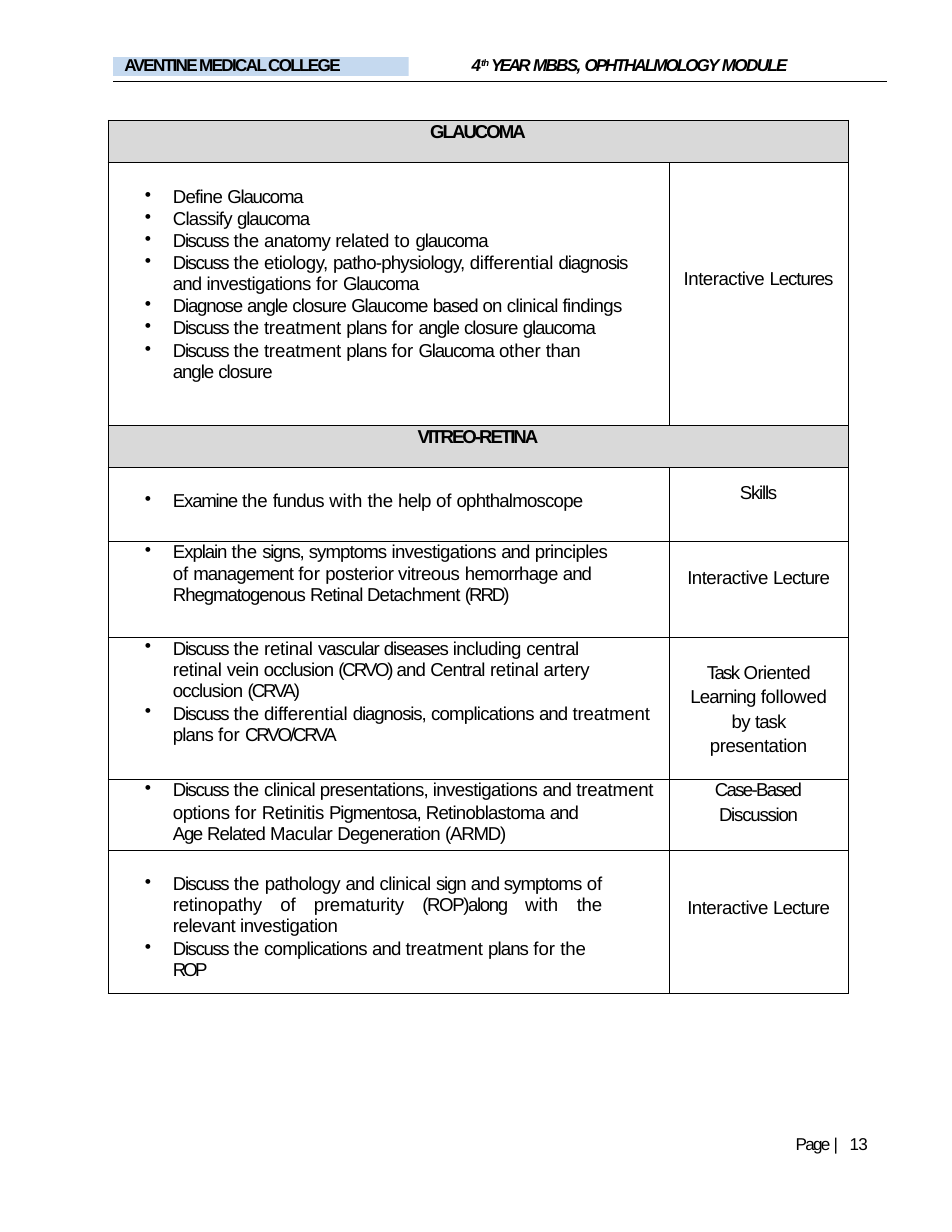
from lxml import etree
from pptx import Presentation
from pptx import util as u
from pptx.dml.color import RGBColor
from pptx.enum import shapes, text
from pptx.oxml import ns

BLACK = RGBColor(0, 0, 0)
BAND_BLUE = RGBColor(0xC5, 0xD9, 0xEF)
HEADING_GREY = RGBColor(0xD9, 0xD9, 0xD9)
CENTER = text.PP_ALIGN.CENTER
JUSTIFY = text.PP_ALIGN.JUSTIFY

WORDS_BY_SPACING = {
    2.2: "|",
    0.1: "to",
    0: "for with",
    -0.1: "the treatment differential of other",
    -0.2: "retinal artery followed retinopathy prematurity",
    -0.3: "related etiology, than posterior vitreous central Interactive presentation "
          "options Retinitis relevant investigation",
    -0.4: "clinical findings help investigations principles including vein Oriented "
          "presentations, Macular pathology",
    -0.5: "Define Classify anatomy patho-physiology, on fundus ophthalmoscope hemorrhage "
          "Retinal Detachment Central complications by Retinoblastoma Degeneration",
    -0.6: "and closure plans symptoms management occlusion Learning task Related Lecture 13",
    -0.7: "glaucoma diagnosis angle Glaucome Explain Rhegmatogenous vascular diagnosis, "
          "Pigmentosa, Lectures",
    -0.8: "Glaucoma Diagnose based Examine signs, diseases Skills Discussion sign (ARMD)",
    -0.9: "Discuss Age (ROP)along",
    -1.1: "Task Case-Based Page",
    -1.3: "(RRD) (CRVA)",
    -1.4: "(CRVO) CRVO/CRVA",
    -1.9: "ROP",
}
SPACING = {word: spacing for spacing, words in WORDS_BY_SPACING.items() for word in words.split()}

ROWS = [
    (27.4, "GLAUCOMA"),
    (168.5, 15, [("Define Glaucoma", 0), ("Classify glaucoma", 0),
                 ("Discuss the anatomy related to glaucoma", 0),
                 ("Discuss the etiology, patho-physiology, differential diagnosis "
                  "and investigations for Glaucoma", 18),
                 ("Diagnose angle closure Glaucome based on clinical findings", 0),
                 ("Discuss the treatment plans for angle closure glaucoma", 0),
                 ("Discuss the treatment plans for Glaucoma other than angle closure", 43)],
     68, ["Interactive Lectures"], 1),
    (27.4, "VITREO-RETINA"),
    (47.5, 15, [("Examine the fundus with the help of ophthalmoscope", 0)], 9.5, ["Skills"], 1),
    (61.9, 0, [("Explain the signs, symptoms investigations and principles of management for "
                "posterior vitreous hemorrhage and Rhegmatogenous Retinal Detachment (RRD)", 33)],
     17, ["Interactive Lecture"], 1),
    (91.4, 0, [("Discuss the retinal vascular diseases including central retinal vein occlusion "
                "(CRVO) and Central retinal artery occlusion (CRVA)", 41),
               ("Discuss the differential diagnosis, complications and treatment "
                "plans for CRVO/CRVA", 5)],
     13.5, ["Task Oriented Learning followed by task presentation"], 1.17),
    (45.4, 0, [("Discuss the clinical presentations, investigations and treatment", 0),
               ("options for Retinitis Pigmentosa, Retinoblastoma and Age Related Macular "
                "Degeneration (ARMD)", 46)],
     0, ["Case-Based", "Discussion"], 1),
    (92.2, 14.5, [("Discuss the pathology and clinical sign and symptoms of retinopathy of "
                   "prematurity (ROP)along with the relevant investigation", 43),
                  ("Discuss the complications and treatment plans for the ROP", 43)],
     30.5, ["Interactive Lecture"], 1),
]


def add_run(paragraph, content, size=12, bold=False, italic=False, spacing=0, baseline=0):
    run = paragraph.add_run()
    run.text = content
    font = run.font
    font.name, font.size, font.bold, font.italic = "Arial", u.Pt(size), bold, italic
    font.color.rgb = BLACK
    properties = run._r.get_or_add_rPr()
    properties.set("spc", str(round(spacing * 100)))
    if baseline:
        properties.set("baseline", str(baseline * 1000))


def write_text(frame, content, size=12, bold=False, spacing=None, align=None,
               line_spacing=None, before=0, left=0, right=0, bullet=False):
    paragraph = frame.paragraphs[0]
    if paragraph.runs:
        paragraph = frame.add_paragraph()
    paragraph.alignment = align
    paragraph.line_spacing = line_spacing
    paragraph.space_before = u.Pt(before)
    properties = paragraph._p.get_or_add_pPr()
    properties.set("marL", str(u.Pt(left)))
    properties.set("marR", str(u.Pt(right)))
    if bullet:
        properties.set("indent", str(u.Pt(-18)))
        etree.SubElement(properties, ns.qn("a:buChar")).set("char", "•")
    if spacing is not None:
        add_run(paragraph, content, size, bold, spacing=spacing)
        return
    words = content.split()
    for index, word in enumerate(words, 1):
        gap = " " if index < len(words) else ""
        add_run(paragraph, word + gap, size, bold, spacing=SPACING[word])


def clear_margins(holder, top=0):
    holder.margin_left = holder.margin_right = holder.margin_bottom = 0
    holder.margin_top = u.Pt(top)


def add_box(slide, left, top, width, height):
    frame = slide.shapes.add_textbox(u.Pt(left), u.Pt(top), u.Pt(width), u.Pt(height)).text_frame
    frame.word_wrap = True
    clear_margins(frame)
    return frame


def add_rule(slide, left, right, top):
    rule = slide.shapes.add_connector(shapes.MSO_CONNECTOR.STRAIGHT,
                                      u.Pt(left), u.Pt(top), u.Pt(right), u.Pt(top))
    rule.line.color.rgb = BLACK
    rule.line.width = u.Pt(0.75)
    etree.SubElement(rule._element.spPr, ns.qn("a:effectLst"))


def add_college_band(slide):
    band = slide.shapes.add_shape(shapes.MSO_SHAPE.RECTANGLE,
                                  u.Pt(72.7), u.Pt(36.7), u.Pt(190), u.Pt(12.2))
    band.shadow.inherit = False
    band.fill.solid()
    band.fill.fore_color.rgb = BAND_BLUE
    band.line.fill.background()
    frame = band.text_frame
    clear_margins(frame)
    frame.vertical_anchor = text.MSO_ANCHOR.TOP
    write_text(frame, "AVENTINE MEDICAL COLLEGE", size=11, bold=True, spacing=-1.1,
               align=text.PP_ALIGN.LEFT, line_spacing=u.Pt(11.6), left=7.2)


def add_module_title(slide):
    paragraph = add_box(slide, 303.1, 34.8, 262.8, 14.4).paragraphs[0]
    for content, size, spacing, baseline in [
            ("4", 11, -0.3, 0), ("th ", 10.5, -0.5, 32), ("YEAR ", 11, -1.7, 0),
            ("MBBS, ", 11, -1.1, 0), ("OPHTHALMOLOGY ", 11, -1.3, 0), ("MODULE", 11, -1.1, 0)]:
        add_run(paragraph, content, size, True, True, spacing, baseline)


def style_cell(cell, fill=None, top=0):
    clear_margins(cell, top)
    properties = cell._tc.get_or_add_tcPr()
    for side in ("lnL", "lnR", "lnT", "lnB"):
        border = etree.SubElement(properties, ns.qn("a:" + side), w=str(u.Pt(0.5)))
        solid = etree.SubElement(border, ns.qn("a:solidFill"))
        etree.SubElement(solid, ns.qn("a:srgbClr"), val=str(BLACK))
    if fill is None:
        cell.fill.background()
    else:
        cell.fill.solid()
        cell.fill.fore_color.rgb = fill


def fill_heading(cells, heading):
    for cell in cells:
        style_cell(cell, HEADING_GREY)
    cells[0].merge(cells[1])
    write_text(cells[0].text_frame, heading, bold=True, spacing=-1.3, align=CENTER,
               line_spacing=u.Pt(14.2))


def fill_objectives(cells, top, objectives, method_top, methods, method_spacing):
    style_cell(cells[0], top=top)
    for objective, right in objectives:
        write_text(cells[0].text_frame, objective, left=41.8, right=right, before=0.7,
                   bullet=objective[0].isupper(), line_spacing=1.02 if right else None,
                   align=JUSTIFY if "pathology" in objective else None)
    style_cell(cells[1], top=method_top)
    for method in methods:
        write_text(cells[1].text_frame, method, align=CENTER, before=2.5, left=9, right=9,
                   line_spacing=method_spacing)


def add_objectives_table(slide):
    frame = slide.shapes.add_table(len(ROWS), 2, u.Pt(69.4), u.Pt(77.3),
                                   u.Pt(475.9), u.Pt(sum(row[0] for row in ROWS)))
    table = frame.table
    table.first_row = table.horz_banding = False
    for column, width in zip(table.columns, (360.7, 115.2)):
        column.width = u.Pt(width)
    for row, (height, *content) in zip(table.rows, ROWS):
        row.height = u.Pt(height)
        fill_row = fill_heading if len(content) == 1 else fill_objectives
        fill_row(list(row.cells), *content)


def main():
    presentation = Presentation()
    presentation.slide_width, presentation.slide_height = u.Pt(612), u.Pt(792)
    slide = presentation.slides.add_slide(presentation.slide_layouts[6])
    add_rule(slide, 72.7, 570.2, 52.4)
    add_module_title(slide)
    write_text(add_box(slide, 510.5, 730.1, 50, 13), "Page | 13", size=11,
               line_spacing=u.Pt(11.5), left=1)
    add_college_band(slide)
    add_objectives_table(slide)
    presentation.save("out.pptx")


if __name__ == "__main__":
    main()
